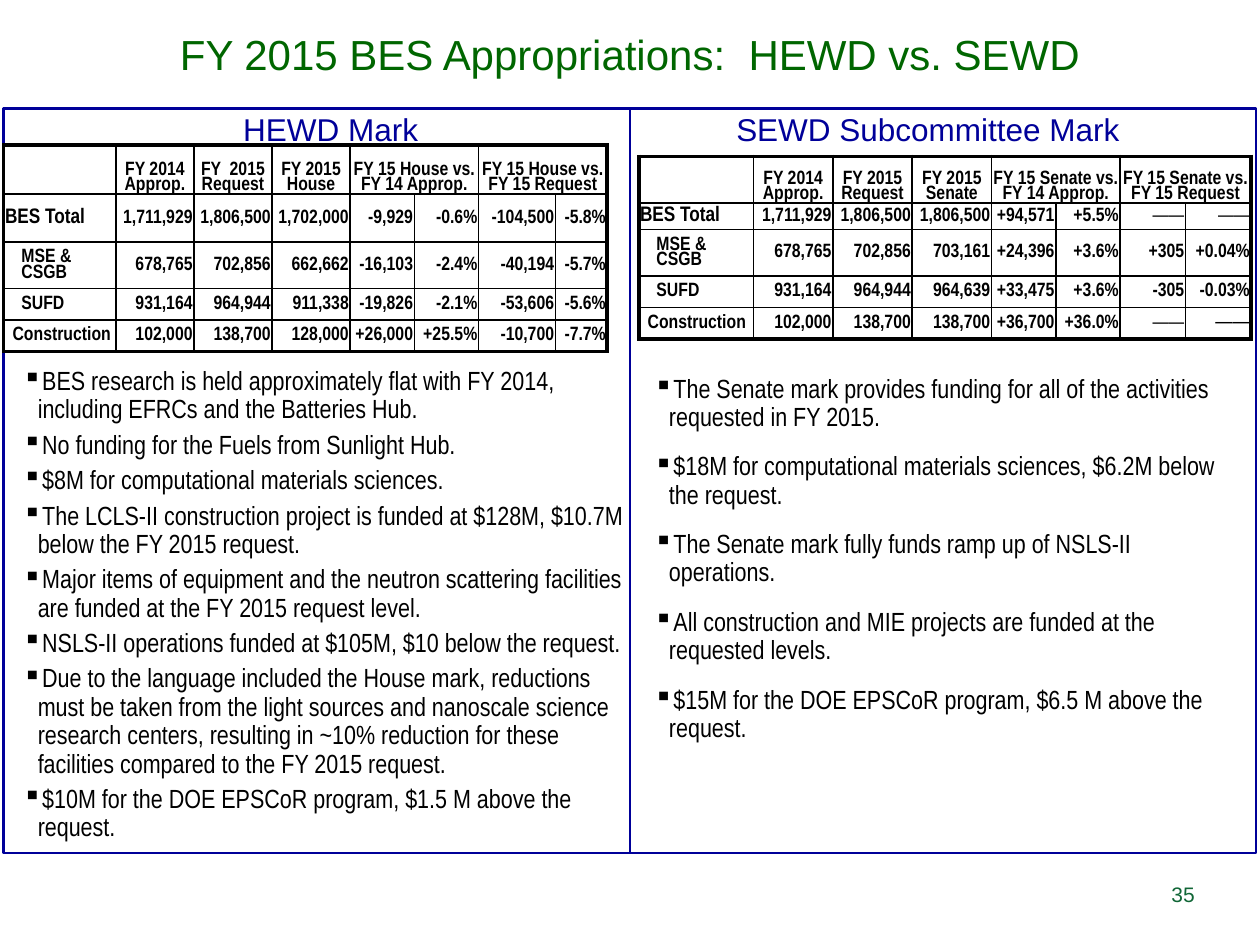
from lxml import etree
from pptx import Presentation
from pptx.dml.color import RGBColor
from pptx.enum.shapes import MSO_CONNECTOR, MSO_SHAPE
from pptx.enum.text import MSO_ANCHOR, MSO_AUTO_SIZE, PP_ALIGN
from pptx.oxml.ns import qn
from pptx.util import Inches, Pt

LEFT, CENTER, RIGHT = PP_ALIGN.LEFT, PP_ALIGN.CENTER, PP_ALIGN.RIGHT
TOP, MIDDLE, BOTTOM = MSO_ANCHOR.TOP, MSO_ANCHOR.MIDDLE, MSO_ANCHOR.BOTTOM
NAVY, GREEN, PAGE_GREEN, BLACK = "000099", "006600", "106636", "000000"
NARROW = "Arial Narrow"
DASH = "——"

# Content
TITLE = "FY 2015 BES Appropriations:  HEWD vs. SEWD"
PAGE = "35"
ROW_INDENTS = [0.01, 0.01, 0.14, 0.14, 0.07]
MARKS = [
    {
        "heading": "HEWD Mark", "heading_left": 0.26,
        "table_at": (0.03, 1.15),
        "columns": [0.89, 0.62, 0.62, 0.62, 0.51, 0.51, 0.61, 0.41],
        "heights": [0.39, 0.38, 0.37, 0.25, 0.25],
        "rows": [
            ["", "FY 2014 Approp.", "FY  2015 Request", "FY 2015 House",
             "FY 15 House vs. FY 14 Approp.", "", "FY 15 House vs. FY 15 Request", ""],
            ["BES Total", "1,711,929", "1,806,500", "1,702,000", "-9,929", "-0.6%", "-104,500", "-5.8%"],
            ["MSE & CSGB", "678,765", "702,856", "662,662", "-16,103", "-2.4%", "-40,194", "-5.7%"],
            ["SUFD", "931,164", "964,944", "911,338", "-19,826", "-2.1%", "-53,606", "-5.6%"],
            ["Construction", "102,000", "138,700", "128,000", "+26,000", "+25.5%", "-10,700", "-7.7%"],
        ],
        "points_at": (0, 2.88, 5.17, 3.89), "gap": 4,
        "points": [
            "BES research is held approximately flat with FY 2014, including EFRCs and the Batteries Hub.",
            "No funding for the Fuels from Sunlight Hub.",
            "$8M for computational materials sciences.",
            "The LCLS-II construction project is funded at $128M, $10.7M below the FY 2015 request.",
            "Major items of equipment and the neutron scattering facilities are funded at the "
            "FY 2015 request level.",
            "NSLS-II operations funded at $105M, $10 below the request.",
            "Due to the language included the House mark, reductions must be taken from the light "
            "sources and nanoscale science research centers, resulting in ~10% reduction for these "
            "facilities compared to the FY 2015 request.",
            "$10M for the DOE EPSCoR program, $1.5 M above the request.",
        ],
    },
    {
        "heading": "SEWD Subcommittee Mark", "heading_left": 5,
        "table_at": (5.07, 1.24),
        "columns": [0.91, 0.63, 0.63, 0.63, 0.51, 0.51, 0.52, 0.52],
        "heights": [0.37, 0.21, 0.37, 0.25, 0.25],
        "rows": [
            ["", "FY 2014 Approp.", "FY 2015 Request", "FY 2015 Senate",
             "FY 15 Senate vs. FY 14 Approp.", "", "FY 15 Senate vs. FY 15 Request", ""],
            ["BES Total", "1,711,929", "1,806,500", "1,806,500", "+94,571", "+5.5%", DASH, DASH],
            ["MSE & CSGB", "678,765", "702,856", "703,161", "+24,396", "+3.6%", "+305", "+0.04%"],
            ["SUFD", "931,164", "964,944", "964,639", "+33,475", "+3.6%", "-305", "-0.03%"],
            ["Construction", "102,000", "138,700", "138,700", "+36,700", "+36.0%", DASH, DASH],
        ],
        "points_at": (5.01, 2.94, 4.9, 3.04), "gap": 12,
        "points": [
            "The Senate mark provides funding for all of the activities requested in FY 2015.",
            "$18M for computational materials sciences, $6.2M below the request.",
            "The Senate mark fully funds ramp up of NSLS-II operations.",
            "All construction and MIE projects are funded at the requested levels.",
            "$15M for the DOE EPSCoR program, $6.5 M above the request.",
        ],
    },
]


def rgb(value):
    return RGBColor.from_string(value)


def write(frame, paragraphs, size=11, font=NARROW, color=BLACK, bold=False,
          align=LEFT, spacing=1.0, after=0, bullet=None):
    for index, text in enumerate(paragraphs):
        paragraph = frame.paragraphs[0] if index == 0 else frame.add_paragraph()
        paragraph.text = text
        if bullet:
            properties = paragraph._p.get_or_add_pPr()
            properties.set("marL", str(Inches(0.12)))
            properties.set("indent", str(-Inches(0.12)))
            etree.SubElement(properties, qn("a:buChar")).set("char", bullet)
        paragraph.alignment = align
        paragraph.line_spacing = spacing
        paragraph.space_before = Pt(0)
        paragraph.space_after = Pt(after)
        paragraph.font.size = Pt(size)
        paragraph.font.name = font
        paragraph.font.bold = bold
        paragraph.font.color.rgb = rgb(color)


def set_margins(target, left, top, right, bottom):
    target.margin_left, target.margin_top = Inches(left), Inches(top)
    target.margin_right, target.margin_bottom = Inches(right), Inches(bottom)


def add_text(slide, box, paragraphs, margins, anchor=TOP, **style):
    frame = slide.shapes.add_textbox(*map(Inches, box)).text_frame
    frame.word_wrap = True
    frame.vertical_anchor = anchor
    set_margins(frame, *margins)
    write(frame, paragraphs, **style)


def set_borders(cell, widths):
    properties = cell._tc.get_or_add_tcPr()
    for side, width in zip("LRTB", widths):
        line = etree.SubElement(properties, qn(f"a:ln{side}"), w=str(Pt(width)))
        fill = etree.SubElement(line, qn("a:solidFill"))
        etree.SubElement(fill, qn("a:srgbClr"), val=BLACK)


def add_budget_table(slide, mark):
    rows, columns, heights = mark["rows"], mark["columns"], mark["heights"]
    last_row, last_column = len(rows) - 1, len(columns) - 1
    box = (*mark["table_at"], sum(columns), sum(heights))
    table = slide.shapes.add_table(len(rows), len(columns), *map(Inches, box)).table
    table.first_row = table.horz_banding = False
    for column, width in zip(table.columns, columns):
        column.width = Inches(width)
    for row, height in zip(table.rows, heights):
        row.height = Inches(height)
    for start in (4, 6):
        table.cell(0, start).merge(table.cell(0, start + 1))

    for r, values in enumerate(rows):
        for c, value in enumerate(values):
            cell = table.cell(r, c)
            end = c + cell.span_width - 1 if cell.is_merge_origin else c
            edges = (c == 0, end == last_column, r == 0, r == last_row)
            set_borders(cell, [2.25 if outer else 1 for outer in edges])
            cell.fill.background()
            set_margins(cell, ROW_INDENTS[r] if c == 0 else 0.01, 0.01, 0.01, 0)
            cell.vertical_anchor = BOTTOM if r == 0 else MIDDLE
            large = value == "BES Total" or (value == DASH and (r, c) == (last_row, last_column))
            write(cell.text_frame, [value], size=12 if large else 11, bold=value != DASH,
                  align=CENTER if r == 0 else LEFT if c == 0 else RIGHT, spacing=0.85)


def add_panels(slide):
    panels = slide.shapes.add_group_shape().shapes
    border = panels.add_shape(MSO_SHAPE.RECTANGLE, *map(Inches, (0.03, 0.86, 9.94, 5.91)))
    border.shadow.inherit = False
    border.fill.background()
    divider = panels.add_connector(MSO_CONNECTOR.STRAIGHT, *map(Inches, (5, 0.86, 5, 6.77)))
    divider.begin_connect(border, 0)
    divider.end_connect(border, 2)
    for shape in (border, divider):
        shape.line.color.rgb = rgb(NAVY)
        shape.line.width = Pt(1.5)
    etree.SubElement(divider._element.spPr, qn("a:effectLst"))


def main():
    deck = Presentation()
    deck.slide_width, deck.slide_height = Inches(10), Inches(7.5)
    slide = deck.slides.add_slide(deck.slide_layouts[5])

    # Title
    title = slide.shapes.title
    title.left, title.top, title.width, title.height = map(Inches, (0, 0.18, 10, 0.5))
    title.text_frame.auto_size = MSO_AUTO_SIZE.NONE
    title.text_frame.vertical_anchor = TOP
    write(title.text_frame, [TITLE], size=24, font="Arial", color=GREEN, align=CENTER)

    # Two panels, each with heading, table and bullet points
    add_panels(slide)
    for mark in MARKS:
        add_text(slide, (mark["heading_left"], 0.9, 4.73, 0.3), [mark["heading"]],
                 (0.09, 0.04, 0.09, 0.04), anchor=MIDDLE, size=18, font="Arial",
                 color=NAVY, align=CENTER, spacing=0.8)
        add_budget_table(slide, mark)
        add_text(slide, mark["points_at"], mark["points"], (0.18, 0.04, 0.18, 0.04),
                 size=15, spacing=0.9, after=mark["gap"], bullet="▪")

    # Page number
    add_text(slide, (9.16, 6.9, 0.42, 0.4), [PAGE], (0.1, 0.05, 0.1, 0.05),
             anchor=MIDDLE, size=12, font="Arial", color=PAGE_GREEN, align=RIGHT)

    deck.save("out.pptx")


if __name__ == "__main__":
    main()
